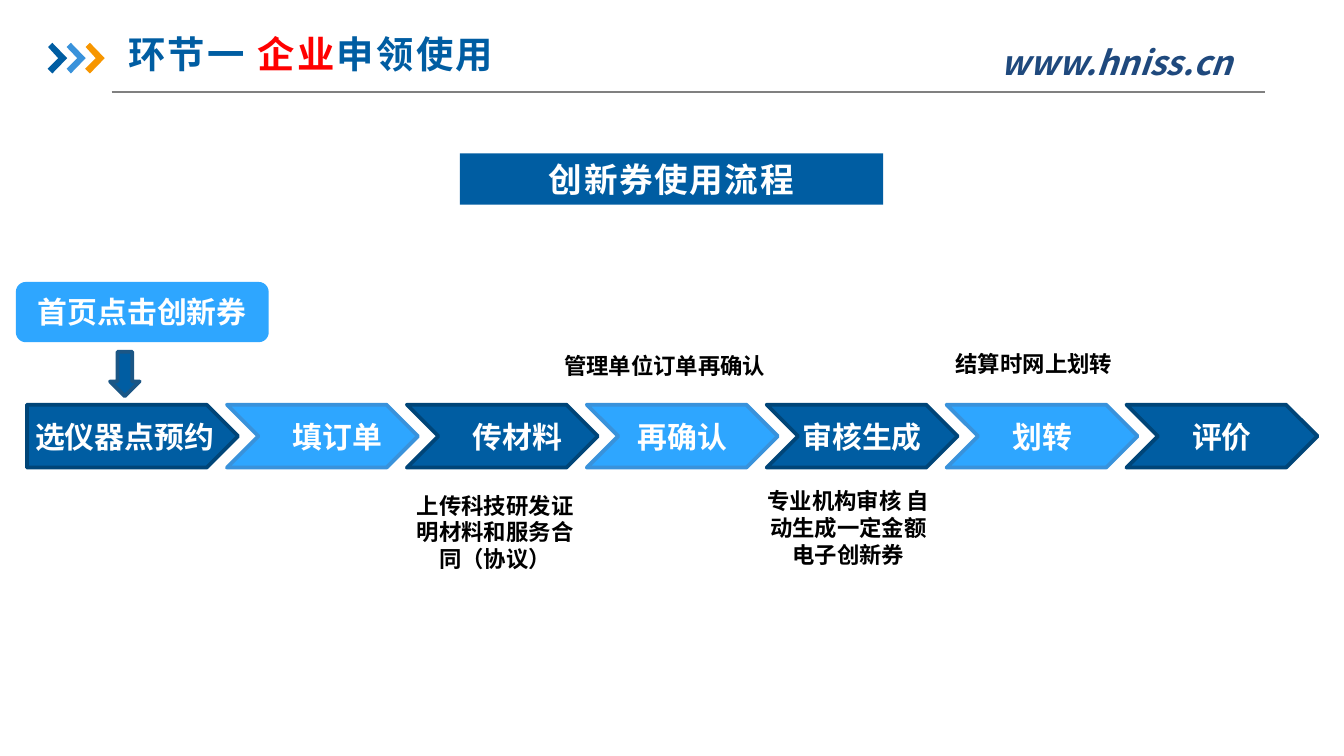
from lxml import etree
from pptx import Presentation
from pptx import util as u
from pptx.dml.color import RGBColor
from pptx.enum import shapes, text
from pptx.oxml.ns import qn

Cm, Pt = u.Cm, u.Pt
kind, side, mid = shapes.MSO_SHAPE, text.PP_ALIGN, text.MSO_ANCHOR
hues = {
    "navy": "005DA2", "sky": "2EA6FF", "blue": "3992DB", "gold": "F79600",
    "deep": "004578", "steel": "1B5685", "ink": "1F497D", "gray": "808080",
    "red": "FF0000", "white": "FFFFFF", "black": "000000",
}
sans = "Noto Sans CJK SC"


def style(run, size, hue, face=sans, gap=None):
    font = run.font
    font.size, font.bold, font.name = Pt(size), True, face
    font.color.rgb = RGBColor.from_string(hues[hue])
    props = font._element
    etree.SubElement(props, qn("a:ea")).set("typeface", sans)
    if gap:
        props.set("spc", str(gap))


def paint(shape, fill, edge=None):
    shape.shadow.inherit = False
    shape.fill.solid()
    shape.fill.fore_color.rgb = RGBColor.from_string(hues[fill])
    if edge:
        shape.line.color.rgb = RGBColor.from_string(hues[edge])
        shape.line.width = Pt(2)
    else:
        shape.line.fill.background()


deck = Presentation()
deck.slide_width, deck.slide_height = Cm(25.4), Cm(14.29)
slide = deck.slides.add_slide(deck.slide_layouts[5])
parts = slide.shapes

rule = parts.add_connector(shapes.MSO_CONNECTOR.STRAIGHT, Cm(2.11), Cm(1.74), Cm(23.9), Cm(1.74))
rule.line.color.rgb = RGBColor.from_string(hues["gray"])
rule.line.width = Pt(0.75)
etree.SubElement(rule._element.spPr, qn("a:effectLst"))

marks = [(99, 81), (127, 110), (99, 139), (90, 130), (110, 110)]
for i, hue in enumerate(["navy", "blue", "gold"]):
    dx = 35.5 * i
    path = parts.build_freeform(91 + dx, 89, scale=Cm(0.01))
    path.add_line_segments([(x + dx, y) for x, y in marks], close=True)
    paint(path.convert_to_shape(), hue)

title = parts.title
title.left, title.top, title.width, title.height = Cm(2.29), Cm(0.53), Cm(10.8), Cm(1.27)
frame = title.text_frame
frame.margin_left = frame.margin_right = Cm(0.13)
frame.margin_top = frame.margin_bottom = Cm(0.05)
frame.vertical_anchor = mid.TOP
para = frame.paragraphs[0]
para.alignment = side.LEFT
for words, hue in [("环节一 ", "navy"), ("企业", "red"), ("申领使用", "navy")]:
    run = para.add_run()
    run.text = words
    style(run, 20, hue, gap=120)

heads = [
    ("创新券使用流程", kind.RECTANGLE, 8.69, 2.9, 8, 0.97, "navy", 18, "Arial", 90),
    ("首页点击创新券", kind.ROUNDED_RECTANGLE, 0.3, 5.33, 4.78, 1.14, "sky", 16, sans, None),
]
for words, form, x, y, w, h, fill, size, face, gap in heads:
    head = parts.add_shape(form, Cm(x), Cm(y), Cm(w), Cm(h))
    paint(head, fill)
    frame = head.text_frame
    frame.text = words
    frame.vertical_anchor = mid.MIDDLE
    frame.paragraphs[0].alignment = side.CENTER
    style(frame.paragraphs[0].runs[0], size, "white", face, gap)

arrow = parts.add_shape(kind.DOWN_ARROW, Cm(2.08), Cm(6.65), Cm(0.56), Cm(0.84))
paint(arrow, "navy", "steel")

steps = [("选仪器点预约", 0), ("填订单", 0.56), ("传材料", 0.56), ("再确认", 0),
         ("审核生成", 0), ("划转", 0), ("评价", 0)]
for i, (words, inset) in enumerate(steps):
    form, x, w = (kind.CHEVRON, 0.89 + 3.4 * i, 3.61) if i else (kind.PENTAGON, 0.51, 3.99)
    step = parts.add_shape(form, Cm(x), Cm(7.65), Cm(w), Cm(1.19))
    paint(step, *(("sky", "blue") if i % 2 else ("navy", "deep")))
    frame = step.text_frame
    frame.text = words
    frame.word_wrap = False
    frame.vertical_anchor = mid.MIDDLE
    frame.margin_left, frame.margin_right = Cm(inset), 0
    frame.paragraphs[0].alignment = side.CENTER
    style(frame.paragraphs[0].runs[0], 16, "white")

notes = [
    ("www.hniss.cn", 18.11, 0.66, 5.99, 1.02, side.CENTER, 18, "ink"),
    ("上传科技研发证明材料和服务合同（协议）", 7.44, 9.17, 3.84, 1.8, side.CENTER, 12, "black"),
    ("专业机构审核 自动生成一定金额电子创新券", 14.17, 9.09, 3.73, 1.3, side.CENTER, 12, "black"),
    ("管理单位订单再确认", 10.41, 6.53, 4.42, 0.76, side.LEFT, 12, "black"),
    ("结算时网上划转", 17.81, 6.5, 3.71, 0.76, side.LEFT, 12, "black"),
]
for words, x, y, w, h, align, size, hue in notes:
    frame = parts.add_textbox(Cm(x), Cm(y), Cm(w), Cm(h)).text_frame
    frame.text = words
    frame.word_wrap = True
    frame.paragraphs[0].alignment = align
    run = frame.paragraphs[0].runs[0]
    style(run, size, hue)
    run.font.italic = hue == "ink"

deck.save("out.pptx")
